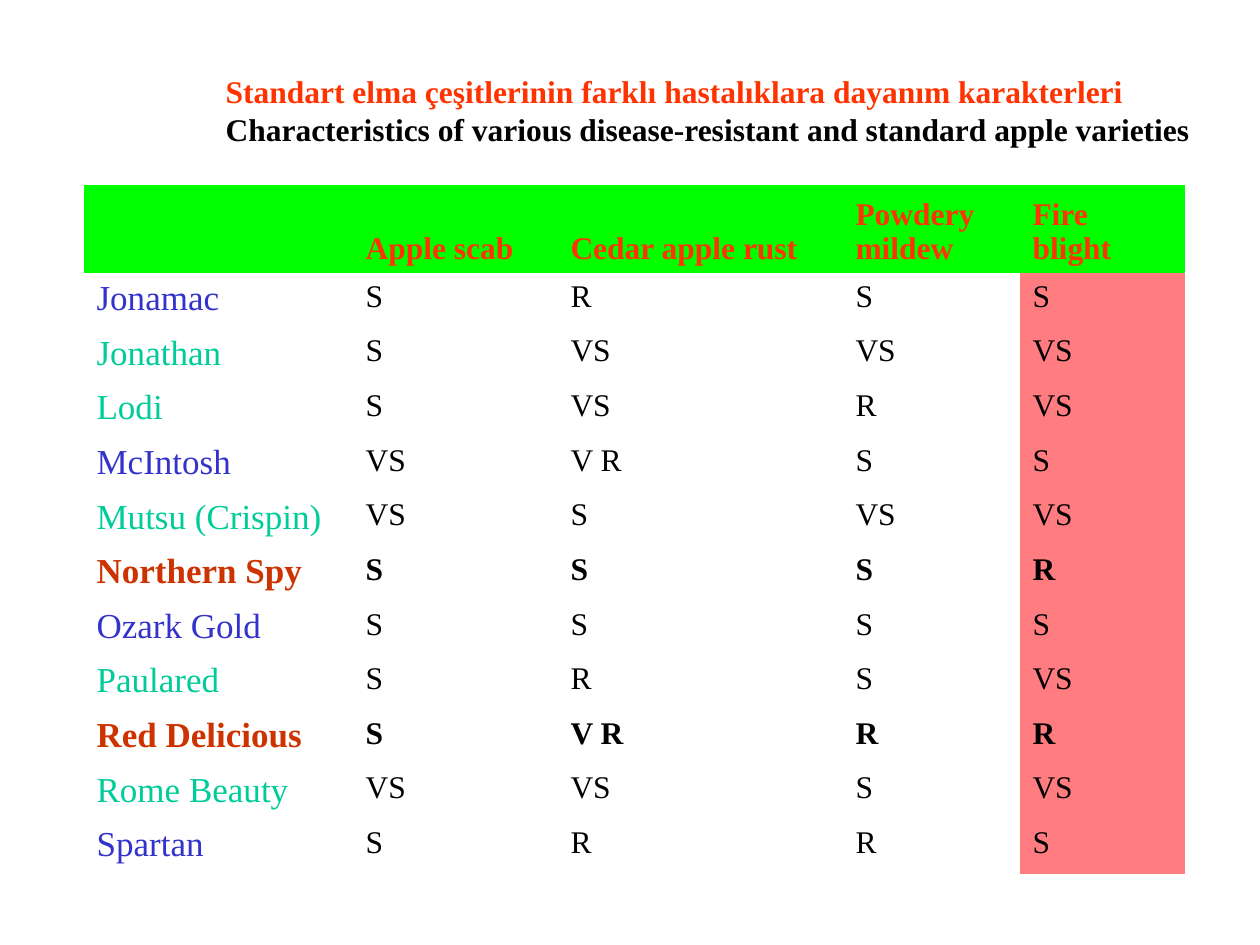
from dataclasses import dataclass

from pptx import Presentation
from pptx import util as u
from pptx.dml.color import RGBColor
from pptx.enum import text

PX = 914400 // 126  # EMU in one px


@dataclass(frozen=True)
class Theme:
    font: str = "Times New Roman"
    body_size: int = 18
    name_size: int = 20
    accent: str = "FF3300"
    ink: str = "000000"
    header_fill: str = "00FF00"
    blight_fill: str = "FF7C80"


THEME = Theme()
# A variety's name takes its colour from its fire blight rating
NAME_COLOURS = {"R": "CC3300", "S": "3333CC", "VS": "00CC99"}
NO_STYLE_NO_GRID = "{2D5ABB26-0587-4C30-8999-92F81FD0307C}"

TITLE_LINES = [
    ("Standart elma çeşitlerinin farklı hastalıklara dayanım karakterleri", THEME.accent),
    ("Characteristics of various disease-resistant and standard apple varieties", THEME.ink),
]
HEADERS = ["", "Apple scab", "Cedar apple rust", "Powdery mildew", "Fire blight"]
VARIETIES = [
    ("Jonamac", "S", "R", "S", "S"),
    ("Jonathan", "S", "VS", "VS", "VS"),
    ("Lodi", "S", "VS", "R", "VS"),
    ("McIntosh", "VS", "V R", "S", "S"),
    ("Mutsu (Crispin)", "VS", "S", "VS", "VS"),
    ("Northern Spy", "S", "S", "S", "R"),
    ("Ozark Gold", "S", "S", "S", "S"),
    ("Paulared", "S", "R", "S", "VS"),
    ("Red Delicious", "S", "V R", "R", "R"),
    ("Rome Beauty", "VS", "VS", "S", "VS"),
    ("Spartan", "S", "R", "R", "S"),
]
COLUMN_WIDTHS = [269, 205, 285, 177, 165]
HEADER_HEIGHT, BODY_HEIGHT = 88, 601


def px(length):
    return u.Emu(length * PX)


def style_paragraph(paragraph, size, colour, bold):
    font = paragraph.font
    font.name = THEME.font
    font.size = u.Pt(size)
    font.bold = bold
    font.color.rgb = RGBColor.from_string(colour)


def add_title(slide):
    title = slide.shapes.title
    title.left, title.top, title.width, title.height = map(px, (213, 66, 1047, 88))
    frame = title.text_frame
    frame.word_wrap = True
    frame.auto_size = text.MSO_AUTO_SIZE.NONE
    frame.vertical_anchor = text.MSO_ANCHOR.TOP
    frame.text = "\n".join(line for line, _ in TITLE_LINES)
    for paragraph, (_, colour) in zip(frame.paragraphs, TITLE_LINES):
        paragraph.alignment = text.PP_ALIGN.LEFT
        style_paragraph(paragraph, THEME.body_size, colour, True)


def fill_cell(cell, content, size, colour, bold, fill=None):
    cell.text = content
    style_paragraph(cell.text_frame.paragraphs[0], size, colour, bold)
    if fill:
        cell.fill.solid()
        cell.fill.fore_color.rgb = RGBColor.from_string(fill)
    else:
        cell.fill.background()


def add_ratings_table(slide):
    frame = slide.shapes.add_table(
        len(VARIETIES) + 1, len(HEADERS), px(84), px(185),
        px(sum(COLUMN_WIDTHS)), px(HEADER_HEIGHT + BODY_HEIGHT))
    table = frame.table
    table.first_row = table.horz_banding = False
    table._tbl.tblPr[0].text = NO_STYLE_NO_GRID
    for column, width in zip(table.columns, COLUMN_WIDTHS):
        column.width = px(width)
    for row in table.rows:
        row.height = u.Emu(px(BODY_HEIGHT) // len(VARIETIES))
    table.rows[0].height = px(HEADER_HEIGHT)

    # Header row
    for cell, header in zip(table.rows[0].cells, HEADERS):
        fill_cell(cell, header, THEME.body_size, THEME.accent, True, THEME.header_fill)
        cell.vertical_anchor = text.MSO_ANCHOR.BOTTOM

    # One row per variety; those resistant to fire blight are bold
    for row_index, (name, *ratings) in enumerate(VARIETIES, start=1):
        blight = ratings[-1]
        bold = blight == "R"
        fill_cell(table.cell(row_index, 0), name, THEME.name_size,
                  NAME_COLOURS[blight], bold)
        for column_index, rating in enumerate(ratings, start=1):
            fill = THEME.blight_fill if column_index == len(ratings) else None
            fill_cell(table.cell(row_index, column_index), rating,
                      THEME.body_size, THEME.ink, bold, fill)


def main():
    presentation = Presentation()
    presentation.slide_width, presentation.slide_height = u.Inches(10), u.Inches(7.5)
    slide = presentation.slides.add_slide(presentation.slide_layouts[5])
    add_ratings_table(slide)
    add_title(slide)
    presentation.save("out.pptx")


if __name__ == "__main__":
    main()
